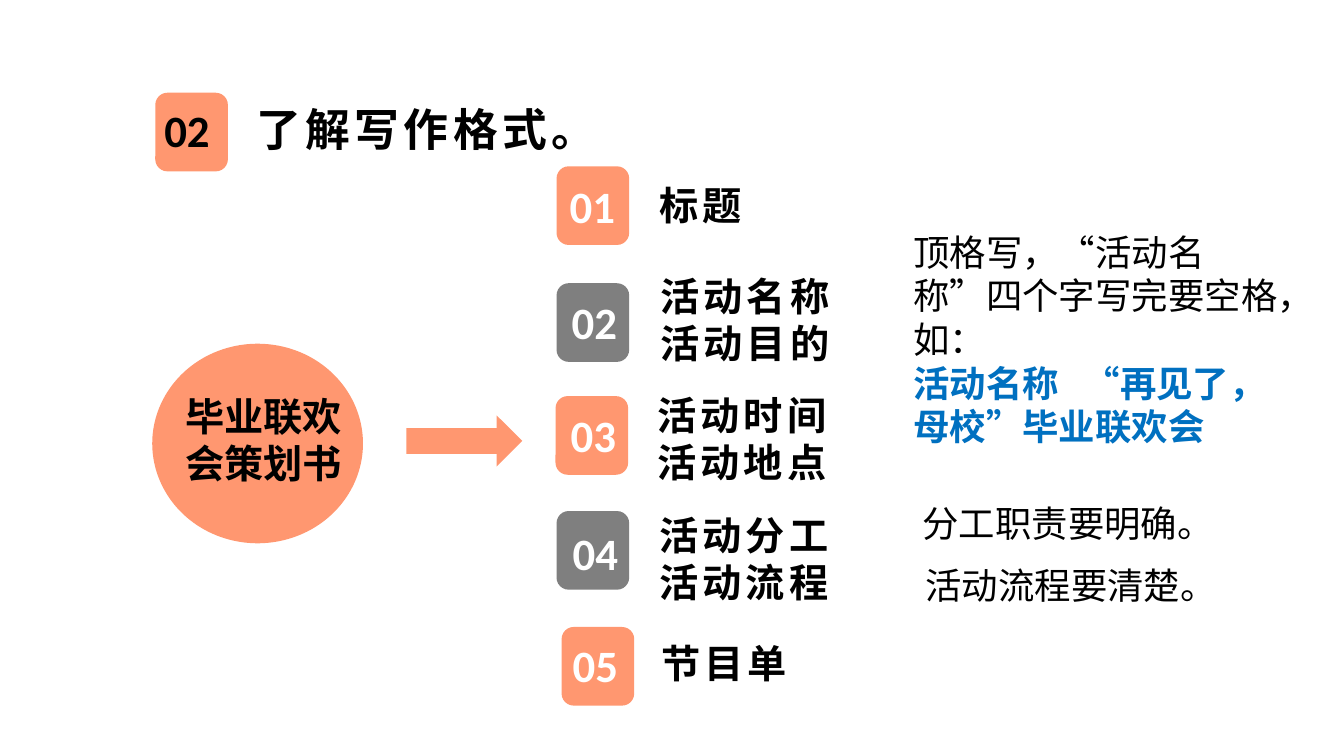
from pptx import Presentation
from pptx.dml.color import RGBColor
from pptx.enum.shapes import MSO_SHAPE
from pptx.enum.text import MSO_AUTO_SIZE, PP_ALIGN
from pptx.oxml.ns import qn
from pptx.util import Pt
from lxml import etree

PX = 9144  # 100 px to the inch
CORAL = RGBColor(0xFF, 0x97, 0x70)
GRAY = RGBColor(0x7F, 0x7F, 0x7F)
BLACK = RGBColor(0, 0, 0)
WHITE = RGBColor(0xFF, 0xFF, 0xFF)
BLUE = RGBColor(0, 0x70, 0xC0)
LATIN, CJK = "Calibri", "Noto Sans CJK SC"

# Content: number, badge corner, number corner, number colour, badge colour
BADGES = [
    ("02", (154, 92), (153, 97), BLACK, CORAL),
    ("01", (552, 165), (555, 172), WHITE, CORAL),
    ("02", (552, 281), (557, 287), WHITE, GRAY),
    ("03", (551, 393), (556, 400), WHITE, CORAL),
    ("04", (552, 507), (558, 517), WHITE, GRAY),
    ("05", (557, 622), (558, 628), WHITE, CORAL),
]
# Lines, box, font, size
LABELS = [
    (["了解写作格式。"], (245, 96, 323, 63), LATIN, 32),
    (["标题"], (644, 175, 224, 57), CJK, 28),
    (["活动名称", "活动目的"], (645, 265, 232, 103), LATIN, 28),
    (["活动时间", "活动地点"], (642, 383, 224, 103), CJK, 28),
    (["活动分工", "活动流程"], (644, 502, 240, 103), LATIN, 28),
    (["节目单"], (646, 629, 224, 57), CJK, 28),
]
TOPIC = ["毕业联欢", "会策划书"]
FORMAT_RULE = "顶格写，“活动名称”四个字写完要空格，如："
FORMAT_EXAMPLE = "活动名称\t“再见了，母校”毕业联欢会"
EXAMPLE_TAB = 169
NOTES = [
    ([FORMAT_RULE, FORMAT_EXAMPLE], (896, 223, 388, 183)),
    (["分工职责要明确。"], (905, 492, 317, 53)),
    (["活动流程要清楚。"], (908, 554, 323, 53)),
]


def add_block(kind, box, color):
    shape = slide.shapes.add_shape(kind, *(n * PX for n in box))
    shape.shadow.inherit = False
    shape.fill.solid()
    shape.fill.fore_color.rgb = color
    shape.line.fill.background()


def add_text(lines, box, font, size, color=BLACK, bold=True,
             align=PP_ALIGN.LEFT, spacing=0, wrap=True):
    frame = slide.shapes.add_textbox(*(n * PX for n in box)).text_frame
    frame.word_wrap = wrap
    frame.auto_size = MSO_AUTO_SIZE.SHAPE_TO_FIT_TEXT
    for index, line in enumerate(lines):
        paragraph = frame.paragraphs[0] if index == 0 else frame.add_paragraph()
        paragraph.alignment = align
        properties = paragraph._p.get_or_add_pPr()
        if "\t" in line:
            tabs = etree.SubElement(properties, qn("a:tabLst"))
            etree.SubElement(tabs, qn("a:tab"), pos=str(EXAMPLE_TAB * PX), algn="l")
        paragraph.text = line
        paragraph.font.name = font
        paragraph.font.size = Pt(size)
        paragraph.font.bold = bold
        paragraph.font.color.rgb = color
        if spacing:
            properties.find(qn("a:defRPr")).set("spc", str(spacing * 100))
    return frame


presentation = Presentation()
presentation.slide_width = 1333 * PX
presentation.slide_height = 750 * PX
slide = presentation.slides.add_slide(presentation.slide_layouts[6])

# Numbered badges
for number, badge_corner, number_corner, text_color, fill in BADGES:
    add_block(MSO_SHAPE.ROUNDED_RECTANGLE, (*badge_corner, 72, 78), fill)
    add_text([number], (*number_corner, 65, 64), LATIN, 32, text_color,
             align=PP_ALIGN.CENTER, wrap=False)

# Heading and section labels
for lines, box, font, size in LABELS:
    add_text(lines, box, font, size, spacing=3)

# Topic circle and arrow
add_block(MSO_SHAPE.OVAL, (151, 341, 209, 198), CORAL)
add_text(TOPIC, (148, 384, 227, 103), LATIN, 28, align=PP_ALIGN.CENTER)
add_block(MSO_SHAPE.RIGHT_ARROW, (403, 412, 115, 51), CORAL)

# Notes, with the example in bold blue
for lines, box in NOTES:
    frame = add_text(lines, box, CJK, 26, bold=False)
    for paragraph in frame.paragraphs[1:]:
        paragraph.font.bold = True
        paragraph.font.color.rgb = BLUE

presentation.save("out.pptx")
